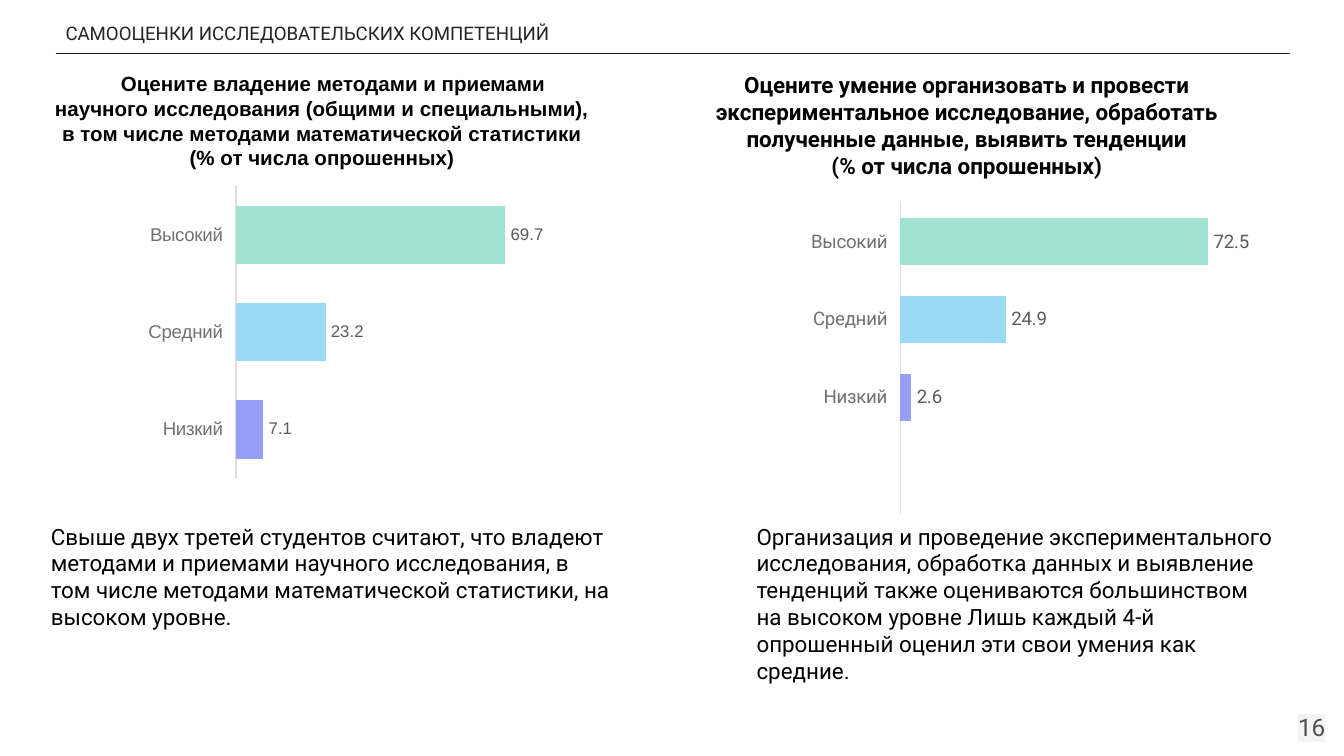
from dataclasses import dataclass
from typing import Optional

from lxml.etree import SubElement
from pptx import Presentation
from pptx.chart.data import CategoryChartData
from pptx.dml.color import RGBColor
from pptx.enum.chart import XL_CHART_TYPE, XL_LABEL_POSITION, XL_TICK_LABEL_POSITION, XL_TICK_MARK
from pptx.enum.shapes import MSO_CONNECTOR
from pptx.enum.text import MSO_ANCHOR, PP_ALIGN
from pptx.oxml import parse_xml
from pptx.oxml.ns import nsdecls, qn
from pptx.slide import Slide
from pptx.util import Pt

BLACK = RGBColor(0x00, 0x00, 0x00)
INK = RGBColor(0x24, 0x24, 0x24)
NUMBER_GRAY = RGBColor(0x50, 0x50, 0x50)
LABEL_GRAY = RGBColor(0x5B, 0x5B, 0x5B)
CATEGORY_GRAY = RGBColor(0x71, 0x71, 0x71)
AXIS_GRAY = RGBColor(0xDE, 0xDE, 0xDE)
LEVEL_COLORS = {
    "Низкий": RGBColor(0x95, 0x9F, 0xFA),
    "Средний": RGBColor(0x9A, 0xDA, 0xF4),
    "Высокий": RGBColor(0xA1, 0xE2, 0xD3),
}
SHARE_NOTE = "(% от числа опрошенных)"


@dataclass(frozen=True)
class Frame:
    left: float
    top: float
    width: float
    height: float

    def lengths(self) -> tuple[Pt, Pt, Pt, Pt]:
        return Pt(self.left), Pt(self.top), Pt(self.width), Pt(self.height)


@dataclass(frozen=True)
class TextBlock:
    frame: Frame
    paragraphs: tuple[str, ...]
    size: float = 12
    font: str = "Roboto"
    color: RGBColor = BLACK
    bold: bool = False
    align: PP_ALIGN = PP_ALIGN.LEFT
    anchor: MSO_ANCHOR = MSO_ANCHOR.TOP
    inset: float = 7.2
    inset_top: float = 3.6
    margin_left: float = 0
    first_indent: float = 0
    highlight: Optional[str] = None


@dataclass(frozen=True)
class BarPanel:
    frame: Frame
    values: dict[str, Optional[float]]
    plot: tuple[float, float, float, float]
    font: str
    label_size: float


TEXTS = (
    TextBlock(Frame(28, 5.8, 361.4, 21.6), ("САМООЦЕНКИ ИССЛЕДОВАТЕЛЬСКИХ КОМПЕТЕНЦИЙ",),
              size=10, color=INK, inset_top=7.2),
    TextBlock(Frame(673.9, 373.7, 43.2, 31), ("16",), size=13, color=NUMBER_GRAY,
              align=PP_ALIGN.RIGHT, anchor=MSO_ANCHOR.MIDDLE, highlight="F3F3F3"),
    TextBlock(Frame(20.2, 34.6, 304.6, 60.5),
              ("Оцените владение методами и приемами научного исследования (общими и "
               "специальными), в том числе методами математической статистики", SHARE_NOTE),
              size=11, font="Arial", bold=True, align=PP_ALIGN.CENTER, first_indent=12),
    TextBlock(Frame(334.8, 34.6, 361.4, 65.5),
              ("Оцените умение организовать и провести экспериментальное исследование, "
               "обработать полученные данные, выявить тенденции", SHARE_NOTE),
              bold=True, align=PP_ALIGN.CENTER, inset=14.4, margin_left=5),
    TextBlock(Frame(20.2, 276.5, 314.6, 65.5),
              ("Свыше двух третей студентов считают, что владеют методами и приемами научного "
               "исследования, в том числе методами математической статистики, на высоком уровне.",)),
    TextBlock(Frame(398.2, 276.5, 291.6, 94.3),
              ("Организация и проведение экспериментального исследования, обработка данных и "
               "выявление тенденций также оцениваются большинством на высоком уровне Лишь "
               "каждый 4-й опрошенный оценил эти свои умения как средние.",)),
)

PANELS = (
    BarPanel(Frame(33.8, 99.4, 280.8, 157),
             {"Низкий": 7.1, "Средний": 23.2, "Высокий": 69.7},
             (0.33, 0, 0.59, 1), "Arial", 9),
    BarPanel(Frame(360, 92.2, 313.9, 183.6),
             {"": None, "Низкий": 2.6, "Средний": 24.9, "Высокий": 72.5},
             (0.39, 0.09, 0.58, 0.91), "Roboto", 10),
)


def add_text(slide: Slide, block: TextBlock) -> None:
    frame = slide.shapes.add_textbox(*block.frame.lengths()).text_frame
    frame.word_wrap = True
    frame.vertical_anchor = block.anchor
    frame.margin_left = frame.margin_right = Pt(block.inset)
    frame.margin_top = frame.margin_bottom = Pt(block.inset_top)
    for index, text in enumerate(block.paragraphs):
        para = frame.add_paragraph() if index else frame.paragraphs[0]
        span = para.add_run()
        span.text = text
        para.alignment = block.align
        para.font.size = Pt(block.size)
        para.font.name = block.font
        para.font.bold = block.bold
        para.font.color.rgb = block.color
        properties = para._p.get_or_add_pPr()
        properties.set("marL", str(Pt(block.margin_left)))
        if index == 0:
            properties.set("indent", str(Pt(block.first_indent)))
        if block.highlight:
            mark = SubElement(span._r.get_or_add_rPr(), qn("a:highlight"))
            SubElement(mark, qn("a:srgbClr")).set("val", block.highlight)


def place_plot(chart, plot: tuple[float, float, float, float]) -> None:
    """Fix the inner plot area as fractions of the chart."""
    tags = "".join(f'<c:{name} val="{value}"/>' for name, value in zip("xywh", plot))
    layout = parse_xml(
        f'<c:layout {nsdecls("c")}><c:manualLayout><c:layoutTarget val="inner"/>'
        f'<c:xMode val="edge"/><c:yMode val="edge"/>{tags}</c:manualLayout></c:layout>')
    area = chart._chartSpace.chart.plotArea
    for old in area.findall(qn("c:layout")):
        area.remove(old)
    area.insert(0, layout)


def add_bars(slide: Slide, panel: BarPanel) -> None:
    data = CategoryChartData()
    data.categories = list(panel.values)
    data.add_series("Series 1", list(panel.values.values()))
    chart = slide.shapes.add_chart(
        XL_CHART_TYPE.BAR_CLUSTERED, *panel.frame.lengths(), data).chart
    chart.has_legend = False
    chart.has_title = False
    chart.font.size = Pt(10)
    chart.font.name = panel.font
    chart.font.color.rgb = INK
    place_plot(chart, panel.plot)

    values = chart.value_axis
    values.minimum_scale, values.maximum_scale = 0, 80
    values.has_major_gridlines = False
    values.visible = False

    levels = chart.category_axis
    levels.major_tick_mark = levels.minor_tick_mark = XL_TICK_MARK.NONE
    levels.tick_label_position = XL_TICK_LABEL_POSITION.LOW
    levels.tick_labels.font.size = Pt(10)
    levels.tick_labels.font.name = panel.font
    levels.tick_labels.font.color.rgb = CATEGORY_GRAY
    levels.format.line.color.rgb = AXIS_GRAY
    levels.format.line.width = Pt(0.75)

    bars = chart.plots[0]
    bars.gap_width = 66
    bars.vary_by_categories = False
    for index, level in enumerate(panel.values):
        if level in LEVEL_COLORS:
            fill = bars.series[0].points[index].format.fill
            fill.solid()
            fill.fore_color.rgb = LEVEL_COLORS[level]
    labels = bars.series[0].data_labels
    labels.show_value = True
    labels.position = XL_LABEL_POSITION.OUTSIDE_END
    labels.font.size = Pt(panel.label_size)
    labels.font.name = panel.font
    labels.font.color.rgb = LABEL_GRAY


def add_header_rule(slide: Slide) -> None:
    rule = slide.shapes.add_connector(
        MSO_CONNECTOR.STRAIGHT, Pt(29.8), Pt(28.8), Pt(691.2), Pt(28.8))
    rule.line.color.rgb = INK
    rule.line.width = Pt(0.75)
    SubElement(rule._element.spPr, qn("a:effectLst"))


def main() -> None:
    deck = Presentation()
    deck.slide_width, deck.slide_height = Pt(720), Pt(405)
    page = deck.slides.add_slide(deck.slide_layouts[6])
    add_header_rule(page)
    for block in TEXTS:
        add_text(page, block)
    for panel in PANELS:
        add_bars(page, panel)
    deck.save("out.pptx")


if __name__ == "__main__":
    main()
